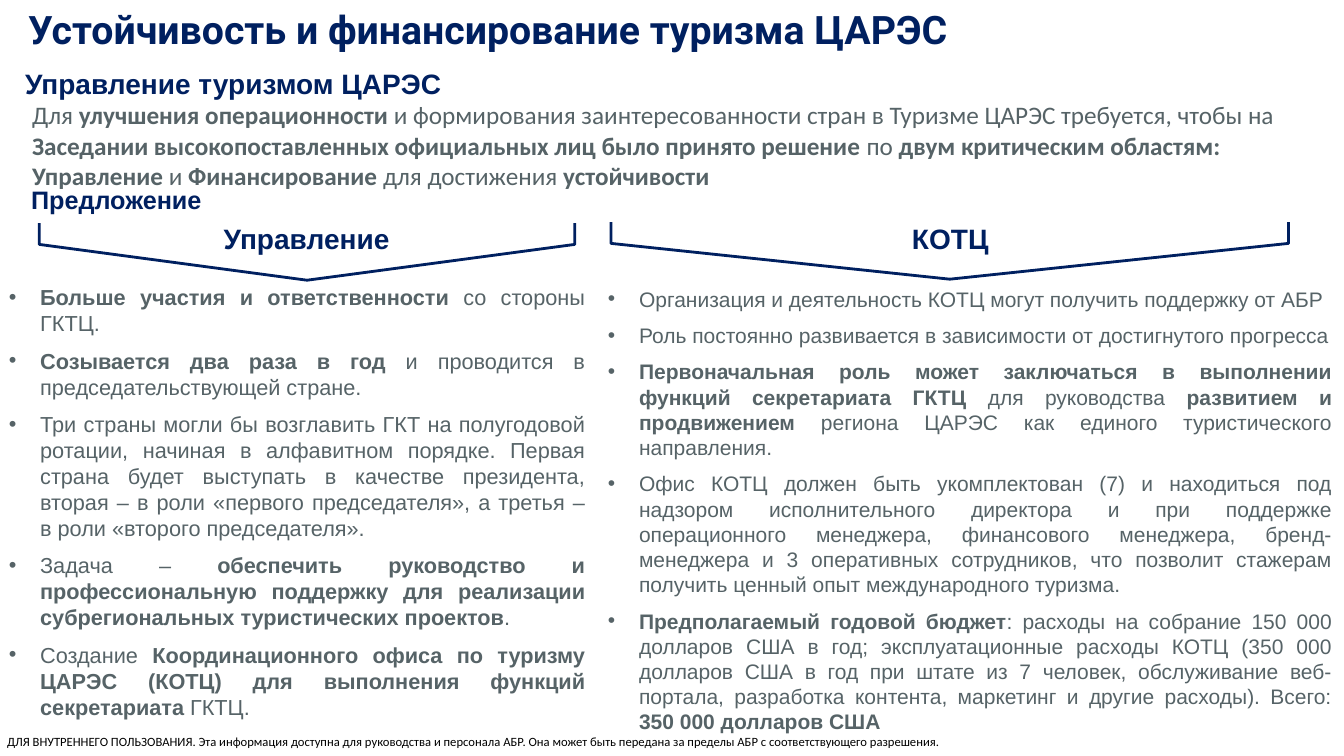
from lxml import etree
from pptx import Presentation
from pptx.dml.color import RGBColor
from pptx.enum.shapes import MSO_SHAPE as Shape
from pptx.enum.text import MSO_ANCHOR as Anchor, MSO_AUTO_SIZE as AutoSize, PP_ALIGN as Align
from pptx.oxml.ns import qn
from pptx.util import Inches, Pt

NAVY = RGBColor(0x00, 0x20, 0x60)
GREY = RGBColor(0x56, 0x63, 0x67)
BLACK = RGBColor(0, 0, 0)
WHITE = RGBColor(255, 255, 255)

TITLE = dict(name="Roboto", size=Pt(28), color=NAVY, bold=True)
HEADING = dict(name="Arial", size=Pt(20), color=NAVY, bold=True)
SUBHEADING = dict(HEADING, size=Pt(18))
INTRO = dict(name="Calibri", size=Pt(18), color=GREY)
NOTICE = dict(name="Calibri", size=Pt(9), color=BLACK)
BODY = dict(name="Arial", color=GREY)

# Text between ** marks is bold
INTRO_TEXT = (
    "Для **улучшения операционности **и формирования заинтересованности стран в Туризме "
    "ЦАРЭС требуется, чтобы на **Заседании высокопоставленных официальных лиц было принято "
    "решение **по **двум критическим областям: Управление **и **Финансирование **для "
    "достижения **устойчивости**")
NOTICE_TEXT = (
    "ДЛЯ ВНУТРЕННЕГО ПОЛЬЗОВАНИЯ. Эта информация доступна для руководства и персонала АБР. "
    "Она может быть передана за пределы АБР с соответствующего разрешения.")
GOVERNANCE = [
    "**Больше участия и ответственности **со стороны ГКТЦ.",
    "**Созывается два раза в год** и проводится в председательствующей стране.",
    "Три страны могли бы возглавить ГКТ на полугодовой ротации, начиная в алфавитном порядке. "
    "Первая страна будет выступать в качестве президента, вторая – в роли «первого "
    "председателя», а третья – в роли «второго председателя».",
    "Задача – **обеспечить руководство и профессиональную поддержку для реализации "
    "субрегиональных туристических проектов**.",
    "Создание **Координационного офиса по туризму ЦАРЭС (КОТЦ) для выполнения функций "
    "секретариата **ГКТЦ.",
]
OFFICE = [
    "Организация и деятельность КОТЦ могут получить поддержку от АБР",
    "Роль постоянно развивается в зависимости от достигнутого прогресса",
    "**Первоначальная роль может заключаться в выполнении функций секретариата ГКТЦ **для "
    "руководства **развитием и продвижением **региона ЦАРЭС как единого туристического "
    "направления.",
    "Офис КОТЦ должен быть укомплектован (7) и находиться под надзором исполнительного "
    "директора и при поддержке операционного менеджера, финансового менеджера, "
    "бренд-менеджера и 3 оперативных сотрудников, что позволит стажерам получить ценный опыт "
    "международного туризма.",
    "**Предполагаемый годовой бюджет**: расходы на собрание 150 000 долларов США в год; "
    "эксплуатационные расходы КОТЦ (350 000 долларов США в год при штате из 7 человек, "
    "обслуживание веб-портала, разработка контента, маркетинг и другие расходы). Всего: "
    "**350 000 долларов США**",
]


def style_font(font, style):
    for key, value in style.items():
        if key == "color":
            font.color.rgb = value
        else:
            setattr(font, key, value)


def write(para, text, style):
    for index, part in enumerate(text.split("**")):
        if part:
            run = para.add_run()
            run.text = part
            style_font(run.font, dict({"bold": index % 2 == 1}, **style))


def add_text(page, box, texts, style, align=Align.LEFT, margin=None, bullets=False):
    frame = page.shapes.add_textbox(*map(Inches, box)).text_frame
    frame.word_wrap = True
    if margin is not None:
        for side in ("left", "top", "right", "bottom"):
            setattr(frame, "margin_" + side, Inches(margin))
    for index, text in enumerate(texts):
        para = frame.add_paragraph() if index else frame.paragraphs[0]
        para.alignment = align
        if bullets:
            para.space_after = Pt(8)
            props = para._p.get_or_add_pPr()
            props.set("marL", str(Inches(0.31)))
            props.set("indent", str(-Inches(0.31)))
            etree.SubElement(props, qn("a:buFont")).set("typeface", "Arial")
            etree.SubElement(props, qn("a:buChar")).set("char", "•")
        write(para, text, style)


def add_block(page, kind, box, line_color):
    block = page.shapes.add_shape(kind, *map(Inches, box))
    block.shadow.inherit = False
    block.fill.solid()
    block.fill.fore_color.rgb = WHITE
    block.line.color.rgb = line_color
    block.line.width = Pt(2)
    return block


def add_bracket(page, box, cover):
    """Downward pentagon whose top edge is hidden by a white strip."""
    left, top, width, height = box
    turned = (left + (width - height) / 2, top + (height - width) / 2, height, width)
    add_block(page, Shape.PENTAGON, turned, NAVY).rotation = 90
    add_block(page, Shape.RECTANGLE, cover, WHITE)


def add_title(page, box, text):
    title = page.shapes.title
    title.left, title.top, title.width, title.height = map(Inches, box)
    frame = title.text_frame
    frame.auto_size = AutoSize.NONE
    frame.vertical_anchor = Anchor.TOP
    para = frame.paragraphs[0]
    para.alignment = Align.LEFT
    write(para, text, TITLE)


def add_column(page, bracket, cover, label_box, label, align, body_box, items, size):
    add_bracket(page, bracket, cover)
    add_text(page, label_box, [label], HEADING, align)
    add_text(page, body_box, items, dict(BODY, size=Pt(size)), Align.JUSTIFY, bullets=True)


def main():
    deck = Presentation()
    deck.slide_width, deck.slide_height = Inches(13.33), Inches(7.5)
    page = deck.slides.add_slide(deck.slide_layouts[5])

    # Header and introduction
    add_title(page, (0.18, 0, 12.17, 0.57), "Устойчивость и финансирование туризма ЦАРЭС")
    add_text(page, (0.07, 7.28, 11.2, 0.15), [NOTICE_TEXT], NOTICE, margin=0)
    add_text(page, (0.22, 0.94, 12.87, 1.01), [INTRO_TEXT], INTRO)

    # Two columns of proposals
    add_column(page, (0.39, 2.07, 5.31, 0.71), (0.29, 1.99, 5.54, 0.21),
               (2.12, 2.15, 1.91, 0.44), "Управление", Align.LEFT,
               (-0.01, 2.77, 5.91, 4.46), GOVERNANCE, 15.5)
    add_column(page, (6.06, 2.06, 6.72, 0.71), (5.93, 1.98, 7.01, 0.21),
               (8.47, 2.15, 1.91, 0.44), "КОТЦ", Align.CENTER,
               (5.93, 2.79, 7.38, 4.59), OFFICE, 15)

    # Section headings
    add_text(page, (0.21, 1.78, 3.1, 0.4), ["Предложение"], SUBHEADING)
    add_text(page, (0.15, 0.61, 4.74, 0.44), ["Управление туризмом ЦАРЭС"], HEADING)
    deck.save("out.pptx")


if __name__ == "__main__":
    main()
